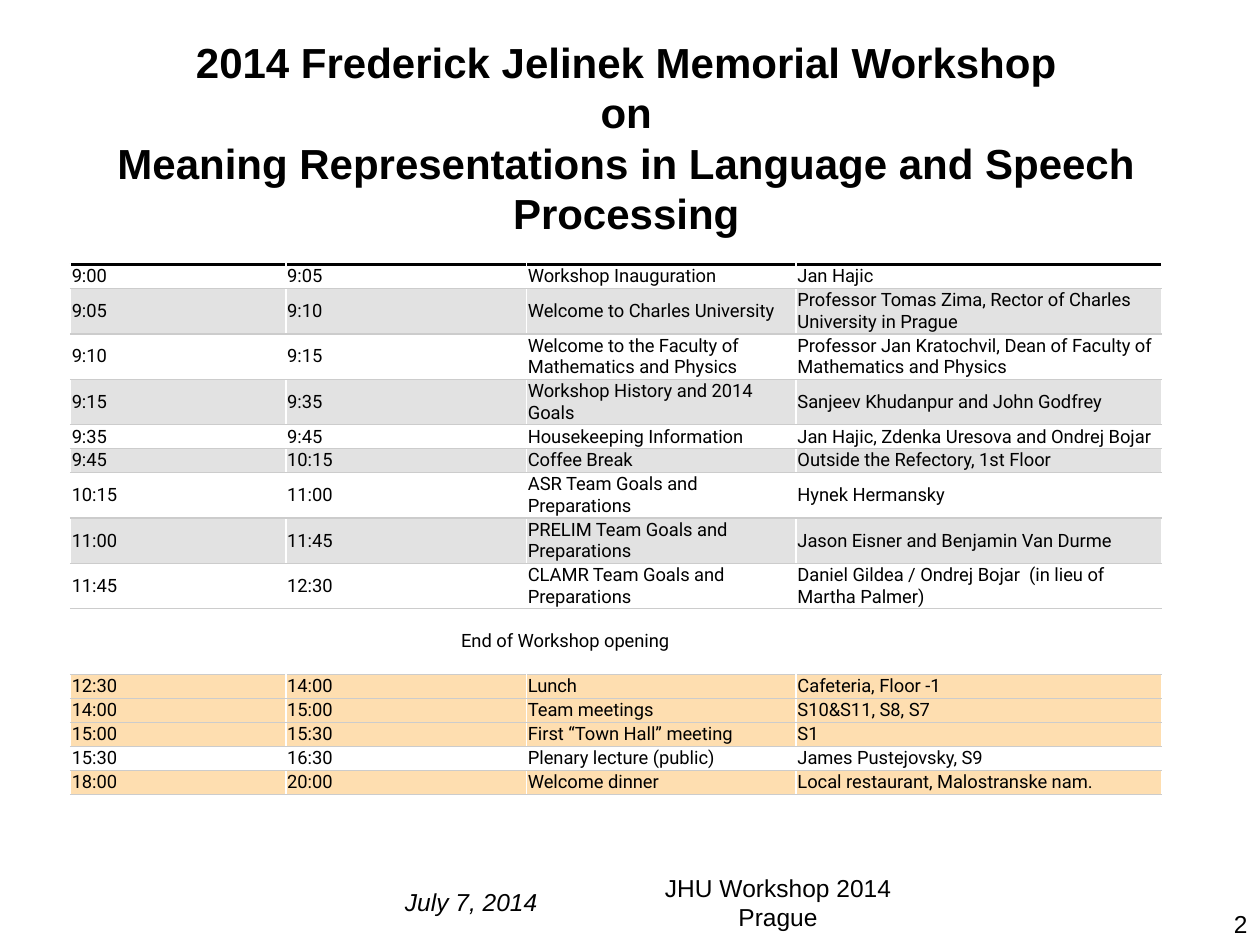
from lxml import etree
from pptx import Presentation
from pptx import util as u
from pptx.dml.color import RGBColor
from pptx.enum import text
from pptx.oxml.ns import qn

BLACK = RGBColor(0x00, 0x00, 0x00)
WHITE = RGBColor(0xFF, 0xFF, 0xFF)
RULE_GREY = RGBColor(0xCC, 0xCC, 0xCC)
BAND_GREY = RGBColor(0xE2, 0xE2, 0xE2)
SOCIAL_ORANGE = RGBColor(0xFE, 0xDE, 0xB0)

COLUMN_WIDTHS = (1.71, 1.91, 2.14, 2.9)
LINE_HEIGHT, CELL_PADDING = 0.17, 0.01
CLOSING_INDENT = 3.09

# Start, end, topic, speaker or place, number of text lines
OPENING = [
    ("9:00", "9:05", "Workshop Inauguration", "Jan Hajic", 1),
    ("9:05", "9:10", "Welcome to Charles University",
     "Professor Tomas Zima, Rector of Charles University in Prague", 2),
    ("9:10", "9:15", "Welcome to the Faculty of Mathematics and Physics",
     "Professor Jan Kratochvil, Dean of Faculty of Mathematics and Physics", 2),
    ("9:15", "9:35", "Workshop History and 2014 Goals",
     "Sanjeev Khudanpur and John Godfrey", 2),
    ("9:35", "9:45", "Housekeeping Information",
     "Jan Hajic, Zdenka Uresova and Ondrej Bojar", 1),
    ("9:45", "10:15", "Coffee Break", "Outside the Refectory, 1st Floor", 1),
    ("10:15", "11:00", "ASR Team Goals and Preparations", "Hynek Hermansky", 2),
    ("11:00", "11:45", "PRELIM Team Goals and Preparations",
     "Jason Eisner and Benjamin Van Durme", 2),
    ("11:45", "12:30", "CLAMR Team Goals and Preparations",
     "Daniel Gildea / Ondrej Bojar  (in lieu of Martha Palmer)", 2),
]
CLOSING = ("End of Workshop opening", "", "", "", 3)
AFTERNOON = [
    ("12:30", "14:00", "Lunch", "Cafeteria, Floor -1", 1),
    ("14:00", "15:00", "Team meetings", "S10&S11, S8, S7", 1),
    ("15:00", "15:30", "First “Town Hall” meeting", "S1", 1),
    ("15:30", "16:30", "Plenary lecture (public)", "James Pustejovsky, S9", 1),
    ("18:00", "20:00", "Welcome dinner", "Local restaurant, Malostranske nam.", 1),
]


def write(frame, words, size=14, font="Arial", bold=False, italic=False,
          align=text.PP_ALIGN.LEFT, anchor=text.MSO_ANCHOR.TOP):
    """Fill a text frame with one formatted paragraph."""
    frame.word_wrap = True
    frame.vertical_anchor = anchor
    frame.text = words
    paragraph = frame.paragraphs[0]
    paragraph.alignment = align
    for run in paragraph.runs:
        run.font.size, run.font.name = u.Pt(size), font
        run.font.bold, run.font.italic = bold, italic
        run.font.color.rgb = BLACK
    return paragraph


def set_border(cell, side, color, points):
    """Draw one cell edge; borders must come before the cell's fill."""
    line = etree.SubElement(cell._tc.get_or_add_tcPr(), qn(f"a:{side}"),
                            w=str(u.Pt(points)))
    fill = etree.SubElement(line, qn("a:solidFill"))
    etree.SubElement(fill, qn("a:srgbClr"), val=str(color))


class WorkshopSlide:
    def __init__(self, presentation):
        self.width = presentation.slide_width
        self.height = presentation.slide_height
        self.slide = presentation.slides.add_slide(presentation.slide_layouts[5])

    def box(self, left, top, width, height):
        """Turn shares of the slide's size into lengths."""
        return (int(left * self.width), int(top * self.height),
                int(width * self.width), int(height * self.height))

    def title(self, words, *shares):
        title = self.slide.shapes.title
        title.left, title.top, title.width, title.height = self.box(*shares)
        title.text_frame.auto_size = text.MSO_AUTO_SIZE.NONE
        write(title.text_frame, words, size=24, bold=True,
              align=text.PP_ALIGN.CENTER, anchor=text.MSO_ANCHOR.MIDDLE)

    def label(self, words, *shares, **style):
        shape = self.slide.shapes.add_textbox(*self.box(*shares))
        write(shape.text_frame, words, **style)

    def cell(self, cell, words, fill, first_row):
        cell.margin_left = cell.margin_top = cell.margin_bottom = u.Inches(CELL_PADDING)
        cell.margin_right = u.Inches(0.02)
        cell.vertical_anchor = text.MSO_ANCHOR.MIDDLE
        top = (BLACK, 1.5) if first_row else (RULE_GREY, 0.75)
        set_border(cell, "lnT", *top)
        set_border(cell, "lnB", RULE_GREY, 0.75)
        cell.fill.solid()
        cell.fill.fore_color.rgb = fill
        frame = cell.text_frame
        return write(frame, words, size=10.5, font="Roboto",
                     anchor=None)

    def schedule(self, rows, fills, *shares):
        table = self.slide.shapes.add_table(
            len(rows), len(COLUMN_WIDTHS), *self.box(*shares)).table
        table.first_row = table.horz_banding = False
        for column, width in zip(table.columns, COLUMN_WIDTHS):
            column.width = u.Inches(width)
        for index, (*words, lines) in enumerate(rows):
            row = table.rows[index]
            row.height = u.Inches(lines * LINE_HEIGHT + CELL_PADDING)
            paragraphs = [self.cell(cell, word, fills[index], index == 0)
                          for cell, word in zip(row.cells, words)]
            # The closing line runs across the whole table
            if rows[index] is CLOSING:
                row.cells[0].merge(row.cells[len(COLUMN_WIDTHS) - 1])
                properties = paragraphs[0]._p.get_or_add_pPr()
                properties.set("marL", str(u.Inches(CLOSING_INDENT)))
                properties.set("indent", "0")


def main():
    presentation = Presentation()
    presentation.slide_width, presentation.slide_height = u.Inches(10), u.Inches(7.5)
    page = WorkshopSlide(presentation)

    # Heading
    page.title("2014 Frederick Jelinek Memorial Workshop\von\v"
               "Meaning Representations in Language and Speech Processing",
               0.012, 0.02, 0.97, 0.25)

    # Schedule: banded opening, white closing line, orange social programme
    fills = [BAND_GREY if index % 2 else WHITE for index in range(len(OPENING))]
    fills.append(WHITE)
    fills += [WHITE if "public" in row[2] else SOCIAL_ORANGE for row in AFTERNOON]
    page.schedule(OPENING + [CLOSING] + AFTERNOON, fills, 0.056, 0.28, 0.87, 0.55)

    # Footer
    center = text.PP_ALIGN.CENTER
    page.label("2", 0.767, 0.955, 0.233, 0.045, align=text.PP_ALIGN.RIGHT)
    page.label("July 7, 2014", 0.279, 0.932, 0.19, 0.045, italic=True, align=center)
    page.label("JHU Workshop 2014 Prague", 0.503, 0.917, 0.229, 0.072, align=center)

    presentation.save("out.pptx")


if __name__ == "__main__":
    main()
